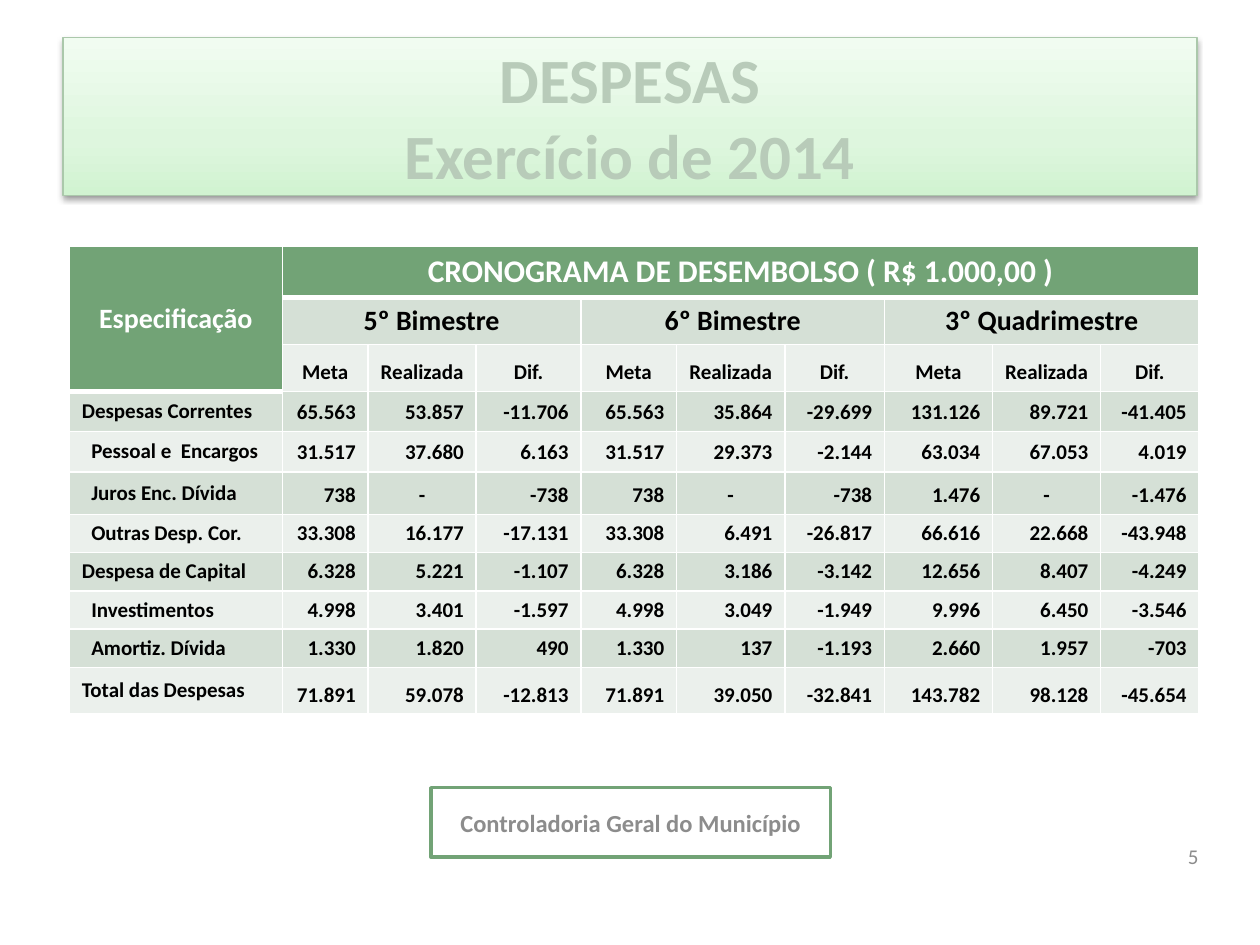
from lxml import etree
from pptx import Presentation
from pptx.dml.color import RGBColor
from pptx.enum.shapes import MSO_SHAPE
from pptx.enum.text import MSO_ANCHOR, PP_ALIGN
from pptx.oxml import parse_xml
from pptx.oxml.ns import nsdecls, qn
from pptx.util import Cm, Pt

RECT = MSO_SHAPE.RECTANGLE
MIDDLE, BOTTOM, TOP = MSO_ANCHOR.MIDDLE, MSO_ANCHOR.BOTTOM, MSO_ANCHOR.TOP
LEFT, CENTER, RIGHT = PP_ALIGN.LEFT, PP_ALIGN.CENTER, PP_ALIGN.RIGHT

GREEN, BAND, PALE_BAND = "72A376", "D5E0D6", "EBF0EC"
WHITE, BLACK, GREY = "FFFFFF", "000000", "8C8C8C"
TITLE_TEXT, TITLE_LINE = "B8CBB9", "ABC8AB"
TITLE_STOPS = [(0, "D1F3D1"), (35, "DEF6DE"), (100, "F1FCF1")]

COLUMN_WIDTHS = [4.29, 1.73, 2.18, 2.11, 1.93, 2.18, 2.01, 2.18, 2.18, 1.98]
ROW_HEIGHTS = [1.02, 0.94, 0.94, 0.81, 0.81, 0.86, 0.77, 0.77, 0.77, 0.77, 0.94]
PERIODS = ["5º Bimestre", "6º Bimestre", "3º Quadrimestre"]
MEASURES = ["Meta", "Realizada", "Dif."]
# Label, whether it is a sub-item, values of the three periods
EXPENSES = [
    ("Despesas Correntes", False,
     "65.563 53.857 -11.706 65.563 35.864 -29.699 131.126 89.721 -41.405"),
    ("Pessoal e  Encargos", True,
     "31.517 37.680 6.163 31.517 29.373 -2.144 63.034 67.053 4.019"),
    ("Juros Enc. Dívida", True, "738 - -738 738 - -738 1.476 - -1.476"),
    ("Outras Desp. Cor.", True,
     "33.308 16.177 -17.131 33.308 6.491 -26.817 66.616 22.668 -43.948"),
    ("Despesa de Capital", False,
     "6.328 5.221 -1.107 6.328 3.186 -3.142 12.656 8.407 -4.249"),
    ("Investimentos", True,
     "4.998 3.401 -1.597 4.998 3.049 -1.949 9.996 6.450 -3.546"),
    ("Amortiz. Dívida", True,
     "1.330 1.820 490 1.330 137 -1.193 2.660 1.957 -703"),
    ("Total das Despesas", False,
     "71.891 59.078 -12.813 71.891 39.050 -32.841 143.782 98.128 -45.654"),
]


def rgb(value):
    return RGBColor.from_string(value)


class SlideBuilder:
    font = "Calibri"

    def __init__(self, slide):
        self.slide = slide

    def put_text(self, frame, text, size, color, bold=True, align=CENTER):
        frame.text = text
        paragraph = frame.paragraphs[0]
        paragraph.alignment = align
        for run in paragraph.runs:
            run.font.name, run.font.size, run.font.bold = self.font, Pt(size), bold
            run.font.color.rgb = rgb(color)

    def box(self, place, text, size, color, line, weight):
        box = self.slide.shapes.add_shape(RECT, *map(Cm, place))
        box.shadow.inherit = False
        box.fill.solid()
        box.fill.fore_color.rgb = rgb(WHITE)
        box.line.color.rgb = rgb(line)
        box.line.width = Pt(weight)
        box.text_frame.word_wrap = True
        box.text_frame.vertical_anchor = MIDDLE
        self.put_text(box.text_frame, text, size, color)
        return box

    def gradient(self, box, stops):
        marks = "".join(f'<a:gs pos="{pos * 1000}"><a:srgbClr val="{color}"/></a:gs>'
                        for pos, color in stops)
        fill = box.element.spPr.find(qn("a:solidFill"))
        fill.addprevious(parse_xml(
            f'<a:gradFill {nsdecls("a")} rotWithShape="1"><a:gsLst>{marks}</a:gsLst>'
            '<a:lin ang="16200000" scaled="0"/></a:gradFill>'))
        box.element.spPr.remove(fill)

    def drop_shadow(self, box):
        effects = box.element.spPr.find(qn("a:effectLst"))
        effects.append(parse_xml(
            f'<a:outerShdw {nsdecls("a")} blurRad="{Pt(3.1)}" dist="{Pt(1.6)}" '
            'dir="5400000" rotWithShape="0"><a:srgbClr val="000000">'
            '<a:alpha val="38000"/></a:srgbClr></a:outerShdw>'))

    def note(self, place, text, size, color, align):
        note = self.slide.shapes.add_textbox(*map(Cm, place))
        note.text_frame.word_wrap = True
        note.text_frame.vertical_anchor = MIDDLE
        self.put_text(note.text_frame, text, size, color, False, align)

    def table(self, left, top, widths, heights):
        table = self.slide.shapes.add_table(
            len(heights), len(widths), Cm(left), Cm(top),
            Cm(sum(widths)), Cm(sum(heights))).table
        for column, width in zip(table.columns, widths):
            column.width = Cm(width)
        for row, height in zip(table.rows, heights):
            row.height = Cm(height)
        return table

    def cell(self, cell, text, size, color=BLACK, align=CENTER, anchor=BOTTOM,
             margin=0.25):
        cell.margin_left = Cm(margin)
        cell.margin_right = Cm(min(margin, 0.25))
        cell.vertical_anchor = anchor
        self.put_text(cell.text_frame, text, size, color, align=align)

    def cell_style(self, cell, fill, top, bottom):
        cell.fill.solid()
        cell.fill.fore_color.rgb = rgb(fill)
        properties = cell._tc.get_or_add_tcPr()
        for index, (side, weight) in enumerate(
                [("lnL", 1), ("lnR", 1), ("lnT", top), ("lnB", bottom)]):
            border = etree.Element(qn(f"a:{side}"), w=str(Pt(weight)))
            paint = etree.SubElement(border, qn("a:solidFill"))
            etree.SubElement(paint, qn("a:srgbClr"), val=WHITE)
            properties.insert(index, border)


def main():
    presentation = Presentation()
    presentation.slide_width, presentation.slide_height = Cm(25.4), Cm(19.05)
    builder = SlideBuilder(
        presentation.slides.add_slide(presentation.slide_layouts[6]))

    # Title banner
    banner = builder.box((1.27, 0.76, 22.86, 3.18), "DESPESAS\vExercício de 2014",
                         36, TITLE_TEXT, TITLE_LINE, 0.75)
    builder.gradient(banner, TITLE_STOPS)
    builder.drop_shadow(banner)

    # Table fills and borders: thick rule below the green heading cells
    schedule = builder.table(1.4, 4.97, COLUMN_WIDTHS, ROW_HEIGHTS)
    for row in range(len(ROW_HEIGHTS)):
        for column in range(len(COLUMN_WIDTHS)):
            heading_rows = 1 if column else 3
            fill = GREEN if row < heading_rows else BAND if row % 2 else PALE_BAND
            builder.cell_style(schedule.cell(row, column), fill,
                               top=3 if row == heading_rows else 1,
                               bottom=3 if row == heading_rows - 1 else 1)

    # Table headings
    schedule.cell(0, 0).merge(schedule.cell(2, 0))
    schedule.cell(0, 1).merge(schedule.cell(0, 9))
    builder.cell(schedule.cell(0, 0), "Especificação", 16, WHITE, anchor=MIDDLE)
    builder.cell(schedule.cell(0, 1), "CRONOGRAMA DE DESEMBOLSO ( R$ 1.000,00 )",
                 18, WHITE, anchor=TOP)
    for index, period in enumerate(PERIODS):
        first = 1 + index * len(MEASURES)
        schedule.cell(1, first).merge(schedule.cell(1, first + 2))
        builder.cell(schedule.cell(1, first), period, 16)
        for column, measure in enumerate(MEASURES, first):
            builder.cell(schedule.cell(2, column), measure, 12, margin=0.2)

    # Expense rows
    for row, (label, is_subitem, values) in enumerate(EXPENSES, 3):
        builder.cell(schedule.cell(row, 0), label, 12, align=LEFT, anchor=MIDDLE,
                     margin=0.44 if is_subitem else 0.25)
        for column, value in enumerate(values.split(), 1):
            builder.cell(schedule.cell(row, column), value, 12,
                         align=CENTER if value == "-" else RIGHT)

    # Footer and page number
    builder.box((8.69, 15.88, 8.05, 1.4), "Controladoria Geral do Município",
                14, GREY, GREEN, 2)
    builder.note((18.49, 16.87, 5.92, 0.79), "5", 12, GREY, RIGHT)

    presentation.save("out.pptx")


if __name__ == "__main__":
    main()
